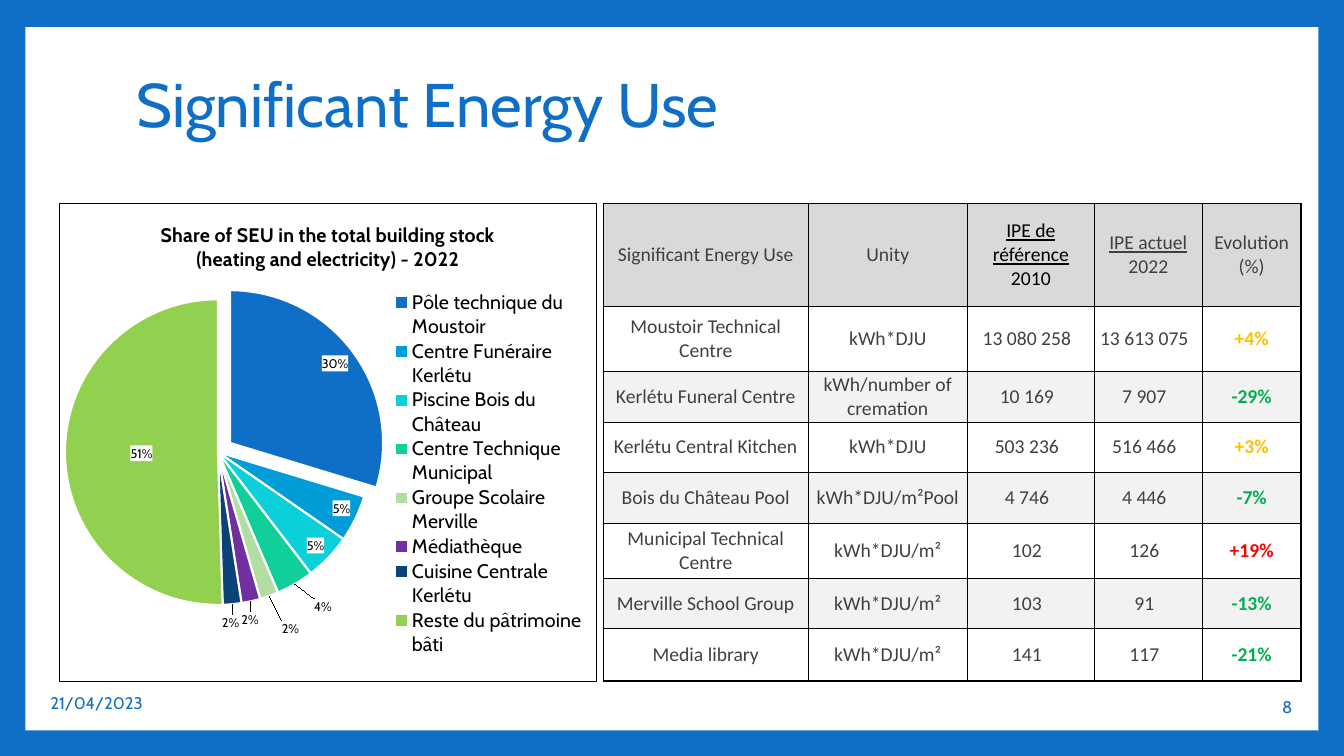
import pptx
import pptx.chart.data
import pptx.dml.color
import pptx.enum.chart
import pptx.enum.shapes
import pptx.enum.text
import pptx.oxml
import pptx.oxml.ns
import pptx.util

WIDTH, HEIGHT = pptx.util.Inches(13.33), pptx.util.Inches(7.5)
COLORS = {"blue": "0F6FC6", "white": "FFFFFF", "black": "000000", "text": "404040",
          "header": "D9D9D9", "band": "F2F2F2", "+4%": "FFC000", "+3%": "FFC000",
          "+19%": "FF0000", "saving": "00B050"}
NAMESPACES = pptx.oxml.ns.nsdecls("a", "c")
POSITION = pptx.enum.chart.XL_LABEL_POSITION
ALIGN = pptx.enum.text.PP_ALIGN
MIDDLE = pptx.enum.text.MSO_ANCHOR.MIDDLE

SHARES = [
    ("Pôle technique du Moustoir", 0.30, "0F6FC6", POSITION.INSIDE_END, None),
    ("Centre Funéraire Kerlétu", 0.05, "009DD9", POSITION.INSIDE_END, None),
    ("Piscine Bois du Château", 0.05, "0BD0D9", POSITION.INSIDE_END, None),
    ("Centre Technique Municipal", 0.04, "10CF9B", POSITION.OUTSIDE_END, (0.03, 0.02)),
    ("Groupe Scolaire Merville", 0.02, "B0DFA1", POSITION.OUTSIDE_END, (0.02, 0.04)),
    ("Médiathèque", 0.02, "7030A0", POSITION.OUTSIDE_END, (-0.02, 0.01)),
    ("Cuisine Centrale Kerlétu", 0.02, "094377", POSITION.OUTSIDE_END, (-0.02, 0.01)),
    ("Reste du pâtrimoine bâti", 0.51, "92D050", POSITION.CENTER, None),
]
CHART_TITLE = "Share of SEU in the total building stock\n(heating and electricity) - 2022"
INDICATORS = [
    ("Significant Energy Use", "Unity", "IPE de référence\n2010", "IPE actuel\n2022", "Evolution (%)"),
    ("Moustoir Technical Centre", "kWh*DJU", "13 080 258", "13 613 075", "+4%"),
    ("Kerlétu Funeral Centre", "kWh/number of cremation", "10 169", "7 907", "-29%"),
    ("Kerlétu Central Kitchen", "kWh*DJU", "503 236", "516 466", "+3%"),
    ("Bois du Château Pool", "kWh*DJU/m²Pool", "4 746", "4 446", "-7%"),
    ("Municipal Technical Centre", "kWh*DJU/m²", "102", "126", "+19%"),
    ("Merville School Group", "kWh*DJU/m²", "103", "91", "-13%"),
    ("Media library", "kWh*DJU/m²", "141", "117", "-21%"),
]
COLUMN_WIDTHS = [2.03, 1.58, 1.26, 1.07, 0.98]
ROW_HEIGHTS = [1.02, 0.65, 0.5, 0.5, 0.5, 0.55, 0.5, 0.52]


def area(left, top, width, height):
    """Turn shares of the slide's size into lengths."""
    return int(left * WIDTH), int(top * HEIGHT), int(width * WIDTH), int(height * HEIGHT)


def rgb(name):
    """Give the colour for a dict key or a hex string."""
    return pptx.dml.color.RGBColor.from_string(COLORS.get(name, name))


def style(font, color, **formats):
    """Set the colour and the given attributes of a font."""
    font.color.rgb = rgb(color)
    for attribute, setting in formats.items():
        setattr(font, attribute, setting)


def fill(target, color):
    """Give a shape, cell or format a solid fill."""
    target.fill.solid()
    target.fill.fore_color.rgb = rgb(color)


def element(markup):
    """Build an XML element in the drawing and chart namespaces."""
    head, tail = markup.split(">", 1)
    slash = "/" if head.endswith("/") else ""
    return pptx.oxml.parse_xml(f"{head.rstrip('/')} {NAMESPACES}{slash}>{tail}")


def layout(inner=False, **shares):
    """Build a manual chart layout from shares of the chart's size."""
    target = '<c:layoutTarget val="inner"/>' if inner else ""
    modes = '<c:xMode val="edge"/><c:yMode val="edge"/>' if "w" in shares else ""
    sizes = "".join(f'<c:{key} val="{share}"/>' for key, share in shares.items())
    return element(f"<c:layout><c:manualLayout>{target}{modes}{sizes}</c:manualLayout></c:layout>")


def place(part, index, part_layout):
    """Replace the layout of a chart part."""
    for old in part.findall(pptx.oxml.ns.qn("c:layout")):
        part.remove(old)
    part.insert(index, part_layout)


def add_page(slide):
    """Draw the white page inside the blue border."""
    fill(slide.background, "blue")
    page = slide.shapes.add_shape(pptx.enum.shapes.MSO_SHAPE.RECTANGLE, *area(0.019, 0.036, 0.962, 0.93))
    page.shadow.inherit = False
    fill(page, "white")
    page.line.fill.background()
    slide.shapes._spTree.insert(2, page._element)


def add_title(slide, wording):
    """Place and format the title."""
    title = slide.shapes.title
    title.left, title.top, title.width, title.height = area(0.094, 0.044, 0.81, 0.197)
    title.text_frame.text = wording
    title.text_frame.vertical_anchor = MIDDLE
    heading = title.text_frame.paragraphs[0]
    heading.alignment, heading.line_spacing = ALIGN.LEFT, 0.9
    style(heading.runs[0].font, "blue", size=pptx.util.Pt(44), name="Cabin")


def add_footer(slide, wording, place_on_slide, alignment):
    """Write one footer entry."""
    frame = slide.shapes.add_textbox(*area(*place_on_slide)).text_frame
    frame.word_wrap, frame.vertical_anchor = True, MIDDLE
    frame.text = wording
    frame.paragraphs[0].alignment = alignment
    style(frame.paragraphs[0].runs[0].font, "blue", size=pptx.util.Pt(12), name="Cabin")


def add_border(cell, side, points):
    """Draw one side of a cell."""
    cell._tc.get_or_add_tcPr().append(element(
        f'<a:{side} w="{int(points * 12700)}"><a:solidFill><a:srgbClr val="{COLORS["black"]}"/>'
        f"</a:solidFill></a:{side}>"))


def fill_cell(cell, wording, row, column):
    """Write and format one indicator cell."""
    is_header, is_change = row == 0, row > 0 and column == 4
    color = COLORS.get(wording, COLORS["saving"]) if is_change else "text"
    if is_header and column == 2:
        color = "black"
    margins = dict.fromkeys(("margin_left", "margin_top", "margin_right", "margin_bottom"), 0)
    if row and column in (2, 3):
        margins["margin_right"] = pptx.util.Inches(0.08)
    for attribute, setting in margins.items():
        setattr(cell, attribute, setting)
    cell.vertical_anchor = MIDDLE
    cell.text = wording
    for line, paragraph in enumerate(cell.text_frame.paragraphs):
        paragraph.alignment = ALIGN.CENTER
        style(paragraph.runs[0].font, color, size=pptx.util.Pt(14), name="Calibri", bold=is_change,
              underline=is_header and column in (2, 3) and line == 0)
    last_row, last_column = len(ROW_HEIGHTS) - 1, len(COLUMN_WIDTHS) - 1
    heavy = {"lnL": column == 0, "lnR": column == last_column,
             "lnT": row in (0, 1), "lnB": row in (0, last_row)}
    for side, is_heavy in heavy.items():
        add_border(cell, side, 1 if is_heavy else 0.5)
    fill(cell, "header" if is_header else "white" if row % 2 else "band")


def add_indicators(slide):
    """Add the table of energy indicators."""
    indicators = slide.shapes.add_table(len(ROW_HEIGHTS), len(COLUMN_WIDTHS),
                                        *area(0.449, 0.269, 0.519, 0.633)).table
    for column, width in zip(indicators.columns, COLUMN_WIDTHS):
        column.width = pptx.util.Inches(width)
    for row, height in zip(indicators.rows, ROW_HEIGHTS):
        row.height = pptx.util.Inches(height)
    for row, entries in enumerate(INDICATORS):
        for column, wording in enumerate(entries):
            fill_cell(indicators.cell(row, column), wording, row, column)


def format_slice(slice_point, color, position, offset):
    """Colour one slice and place its label."""
    fill(slice_point.format, color)
    slice_point.format.line.color.rgb = rgb("white")
    slice_point.format.line.width = pptx.util.Pt(1.5)
    label = slice_point.data_label
    style(label.font, "black", size=pptx.util.Pt(9), name="Cabin")
    label.position = position
    markup = label._get_or_add_dLbl()
    markup.find(pptx.oxml.ns.qn("c:txPr")).addprevious(element(
        f'<c:spPr><a:solidFill><a:srgbClr val="{COLORS["white"]}"/></a:solidFill></c:spPr>'))
    if offset:
        place(markup, 1, layout(x=offset[0], y=offset[1]))


def add_shares(slide):
    """Add the pie of energy shares."""
    shares = pptx.chart.data.CategoryChartData(number_format="0%")
    shares.categories = [entry[0] for entry in SHARES]
    shares.add_series("Series 1", [entry[1] for entry in SHARES])
    pie = slide.shapes.add_chart(pptx.enum.chart.XL_CHART_TYPE.PIE,
                                 *area(0.044, 0.269, 0.4, 0.633), shares).chart
    style(pie.font, "black", size=pptx.util.Pt(10), name="Cabin")
    pie.has_title = pie.has_legend = True
    pie.chart_title.text_frame.text = CHART_TITLE
    for paragraph in pie.chart_title.text_frame.paragraphs:
        style(paragraph.runs[0].font, "black", size=pptx.util.Pt(14), name="Cabin", bold=True)
    pie.legend.position = pptx.enum.chart.XL_LEGEND_POSITION.RIGHT
    pie.legend.include_in_layout = False
    style(pie.legend.font, "black", size=pptx.util.Pt(14), name="Cabin")
    place(pie.legend._element, 1, layout(x=0.62, y=0.18, w=0.36, h=0.77))
    plot = pie.plots[0]
    plot.vary_by_categories = True
    for slice_point, entry in zip(plot.series[0].points, SHARES):
        format_slice(slice_point, *entry[2:])
    chart_space = pie._chartSpace
    chart_space.xpath(".//c:dPt[1]/c:spPr")[0].addprevious(element('<c:explosion val="10"/>'))
    place(chart_space.xpath(".//c:plotArea")[0], 0, layout(True, x=0.01, y=0.13, w=0.57, h=0.78))
    chart_space.xpath("c:chart")[0].addnext(element(
        f'<c:spPr><a:solidFill><a:srgbClr val="{COLORS["white"]}"/></a:solidFill><a:ln w="9525">'
        f'<a:solidFill><a:srgbClr val="{COLORS["black"]}"/></a:solidFill></a:ln></c:spPr>'))


def main():
    """Build the slide and save it."""
    deck = pptx.Presentation()
    deck.slide_width, deck.slide_height = WIDTH, HEIGHT
    slide = deck.slides.add_slide(deck.slide_layouts[5])
    add_page(slide)
    add_title(slide, "Significant Energy Use")
    add_footer(slide, "21/04/2023", (0.03, 0.903, 0.103, 0.053), ALIGN.LEFT)
    add_footer(slide, "8", (0.875, 0.908, 0.094, 0.053), ALIGN.RIGHT)
    add_indicators(slide)
    add_shares(slide)
    deck.save("out.pptx")


if __name__ == "__main__":
    main()
